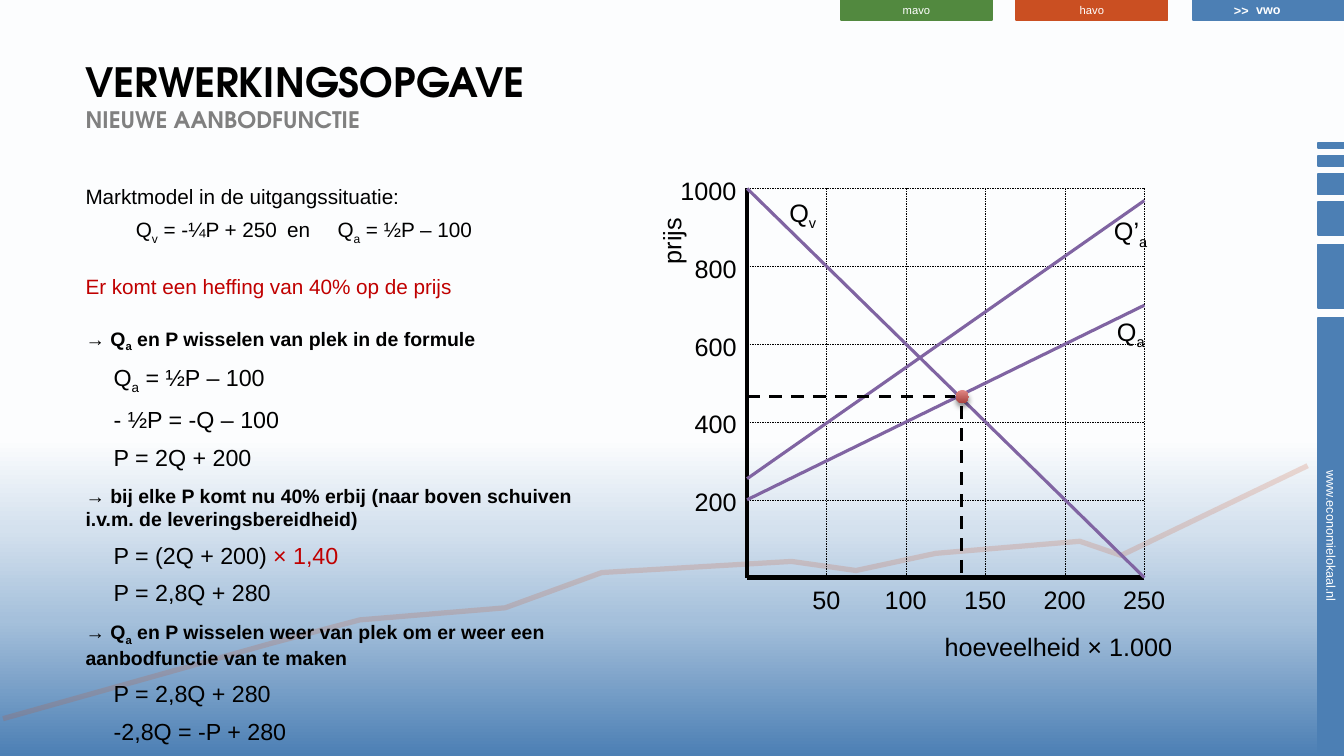
from dataclasses import dataclass

from lxml import etree
from pptx import Presentation
from pptx.dml.color import RGBColor
from pptx.enum.dml import MSO_LINE
from pptx.enum.shapes import MSO_CONNECTOR, MSO_SHAPE
from pptx.enum.text import MSO_ANCHOR, MSO_AUTO_SIZE, PP_ALIGN
from pptx.oxml.ns import qn
from pptx.util import Inches, Pt

RECT, OVAL = MSO_SHAPE.RECTANGLE, MSO_SHAPE.OVAL
STRAIGHT = MSO_CONNECTOR.STRAIGHT
DASH = MSO_LINE.DASH
MIDDLE = MSO_ANCHOR.MIDDLE
LEFT, CENTER = PP_ALIGN.LEFT, PP_ALIGN.CENTER
FIXED = MSO_AUTO_SIZE.NONE

HUES = {
    "blue": "4C7FB4", "orange": "CA4F22", "green": "52893F",
    "violet": "8064A2", "red": "C00000", "ink": "000000",
    "gray": "808080", "white": "FFFFFF",
}
SKY = [(0, "4C7FB4"), (18, "A5C0DB"), (30, "D4E1EE"), (42, "FCFDFE"), (50, "FFFFFF")]
GLOW = [(0, "E18785"), (100, "A7423F")]
X_ZERO, Y_ZERO = 7.41, 5.73
X_SPAN, Y_SPAN = 3.94, 3.86
Q_MAX, P_MAX = 250, 1000


@dataclass
class Bar:
    x: float
    y: float
    wide: float
    high: float
    hue: str = "blue"
    text: str = ""
    size: float = 9
    bold: bool = False
    turn: float = 0


@dataclass
class Stroke:
    start: tuple[float, float]
    end: tuple[float, float]
    hue: str
    width: float
    dashed: bool = False


@dataclass
class Label:
    text: str
    x: float
    y: float
    wide: float
    turn: float = 0
    size: float = 18
    hue: str = "ink"
    bold: bool = False
    high: float = 0.4


@dataclass
class Row:
    text: str
    size: float
    before: float
    hue: str = "ink"
    bold: bool = False
    indent: float = 0
    tail: str = ""
    tabs: tuple[float, ...] = ()


def color(key: str) -> RGBColor:
    return RGBColor.from_string(HUES[key])


def write(para, text: str, *, size: float, hue: str = "ink", bold: bool = False,
          face: str = "Arial", align=LEFT) -> None:
    para.alignment = align
    for spot, part in enumerate(text.split("|")):
        if not part:
            continue
        run = para.add_run()
        run.text = part
        run.font.name, run.font.size, run.font.bold = face, Pt(size), bold
        run.font.color.rgb = color(hue)
        if spot % 2:
            run.font._element.set("baseline", "-25000")


def grade(fill, root, stops: list, angle: float) -> None:
    fill.gradient()
    fill.gradient_angle = angle
    group = root.find(".//" + qn("a:gsLst"))
    for old in list(group):
        group.remove(old)
    for place, code in stops:
        stop = etree.SubElement(group, qn("a:gs"), pos=str(place * 1000))
        etree.SubElement(stop, qn("a:srgbClr"), val=code)


def draw_bar(slide, bar: Bar) -> None:
    shape = slide.shapes.add_shape(RECT, *map(Inches, (bar.x, bar.y, bar.wide, bar.high)))
    shape.rotation = bar.turn
    shape.shadow.inherit = False
    shape.fill.solid()
    shape.fill.fore_color.rgb = shape.line.color.rgb = color(bar.hue)
    shape.line.width = Pt(1.25)
    if bar.text:
        frame = shape.text_frame
        frame.margin_top, frame.margin_bottom = 0, Inches(0.01)
        frame.vertical_anchor = MIDDLE
        write(frame.paragraphs[0], bar.text, size=bar.size, hue="white",
              bold=bar.bold, align=CENTER)


def draw_line(slide, item: Stroke) -> None:
    line = slide.shapes.add_connector(STRAIGHT, *map(Inches, item.start + item.end))
    line.line.color.rgb = color(item.hue)
    line.line.width = Pt(item.width)
    if item.dashed:
        line.line.dash_style = DASH
    etree.SubElement(line._element.spPr, qn("a:effectLst"))


def draw_label(slide, item: Label) -> None:
    box = slide.shapes.add_textbox(*map(Inches, (item.x, item.y, item.wide, item.high)))
    box.rotation = item.turn
    box.text_frame.word_wrap = False
    write(box.text_frame.paragraphs[0], item.text, size=item.size, hue=item.hue, bold=item.bold)


def draw_trend(slide) -> None:
    points = [(12.97, 4.62), (11.12, 5.51), (10.71, 5.37), (9.28, 5.49), (8.49, 5.66),
              (7.85, 5.57), (5.97, 5.68), (5.01, 6.03), (3.57, 6.15), (2.7, 6.38), (0.03, 7.13)]
    marks = [(Inches(x), Inches(y)) for x, y in points]
    build = slide.shapes.build_freeform(*marks[0])
    build.add_line_segments(marks[1:], close=False)
    trend = build.convert_to_shape()
    trend.shadow.inherit = False
    trend.fill.background()
    trend.line.color.rgb = color("orange")
    trend.line.width = Pt(3.75)
    tint = trend._element.find(".//" + qn("a:ln")).find(".//" + qn("a:srgbClr"))
    etree.SubElement(tint, qn("a:alpha"), val="19000")


def draw_ball(slide) -> None:
    ball = slide.shapes.add_shape(OVAL, *map(Inches, (9.48, 3.87, 0.13, 0.13)))
    ball.shadow.inherit = False
    ball.line.fill.background()
    grade(ball.fill, ball._element, GLOW, 270)
    shade = etree.SubElement(ball._element.spPr.find(qn("a:effectLst")), qn("a:outerShdw"),
                             blurRad=str(Pt(4)), dist=str(Pt(3)), dir="5400000", rotWithShape="0")
    tint = etree.SubElement(shade, qn("a:srgbClr"), val=HUES["ink"])
    etree.SubElement(tint, qn("a:alpha"), val="46000")


def draw_title(slide) -> None:
    title = slide.shapes.title
    title.left, title.top, title.width, title.height = map(Inches, (0.75, 0.5, 10.02, 0.89))
    frame = title.text_frame
    frame.auto_size, frame.vertical_anchor = FIXED, MIDDLE
    para = frame.paragraphs[0]
    face = "TeX Gyre Adventor"
    write(para, "VERWERKINGSOPGAVE", size=28.8, bold=True, face=face)
    para.add_line_break()
    write(para, "NIEUWE AANBODFUNCTIE", size=16.2, hue="gray", bold=True, face=face)


def draw_body(slide, rows: list[Row]) -> None:
    frame = slide.shapes.add_textbox(*map(Inches, (0.75, 1.77, 5.4, 5.15))).text_frame
    frame.word_wrap = True
    for spot, row in enumerate(rows):
        para = frame.add_paragraph() if spot else frame.paragraphs[0]
        para.space_before, para.space_after = Pt(row.before), Pt(3.4)
        props = para._p.get_or_add_pPr()
        props.set("marL", str(Inches(row.indent)))
        props.set("indent", "0")
        if row.tabs:
            group = etree.SubElement(props, qn("a:tabLst"))
            for stop in row.tabs:
                etree.SubElement(group, qn("a:tab"), pos=str(Inches(stop)), algn="l")
        write(para, row.text, size=row.size, hue=row.hue, bold=row.bold)
        write(para, row.tail, size=row.size, hue="red")


def step(text: str, tail: str = "") -> Row:
    return Row(text, 16.6, 3.8, indent=0.28, tail=tail)


def head(text: str, before: float = 6) -> Row:
    return Row(text, 13.9, before, bold=True)


def spot(q: float, p: float) -> tuple[float, float]:
    return X_ZERO + X_SPAN * q / Q_MAX, Y_ZERO - Y_SPAN * p / P_MAX


def draw_graph(slide) -> None:
    prices, counts = range(200, P_MAX + 1, 200), range(50, Q_MAX + 1, 50)
    lines = [Stroke(spot(0, P_MAX), spot(0, 0), "ink", 3),
             Stroke(spot(Q_MAX, 0), spot(0, 0), "ink", 3)]
    lines += [Stroke(spot(0, p), spot(Q_MAX, p), "ink", 0.25, True) for p in prices]
    lines += [Stroke(spot(q, P_MAX), spot(q, 0), "ink", 0.25, True) for q in counts]
    lines += [Stroke(spot(0, first), spot(Q_MAX, last), "violet", 2.25)
              for first, last in ((P_MAX, 0), (200, 700), (254, 969))]
    lines += [Stroke(spot(0, 466), spot(131, 466), "ink", 2.25, True),
              Stroke(spot(135, 440), spot(135, 0), "ink", 2.25, True)]
    for line in lines:
        draw_line(slide, line)
    labels = [Label("hoeveelheid × 1.000", 9.27, 6.21, 2.48), Label("prijs", 6.33, 2.19, 0.66, 270),
              Label("Q|v", 7.73, 1.91, 0.48), Label("Q|a", 10.98, 3.09, 0.49),
              Label("Q’|a", 10.95, 2.09, 0.55)]
    for p in prices:
        wide = 0.2 + 0.14 * len(str(p))
        labels.append(Label(str(p), X_ZERO - wide, spot(0, p)[1] - 0.18, wide))
    for q in counts:
        wide = 0.2 + 0.14 * len(str(q))
        labels.append(Label(str(q), spot(q, 0)[0] - wide / 2, 5.75, wide))
    for label in labels:
        draw_label(slide, label)
    draw_ball(slide)


def main() -> None:
    deck = Presentation()
    deck.slide_width, deck.slide_height = Inches(13.33), Inches(7.5)
    slide = deck.slides.add_slide(deck.slide_layouts[5])
    grade(slide.background.fill, slide._element, SKY, 90)
    bars = [Bar(11.83, 0, 1.5, 0.2, "blue", "vwo", 9, True),
            Bar(10.08, 0, 1.5, 0.2, "orange", "havo", 8),
            Bar(8.34, 0, 1.5, 0.2, "green", "mavo", 8)]
    sides = [(4.33, 5.32, "www.economielokaal.nl"), (0.63, 2.74, ""), (0.33, 2.17, ""),
             (0.2, 1.83, ""), (0.1, 1.6, ""), (0.05, 1.44, "")]
    bars += [Bar(13.2 - long / 2, mid - 0.13, long, 0.26, text=text, turn=90)
             for long, mid, text in sides]
    for bar in bars:
        draw_bar(slide, bar)
    draw_trend(slide)
    draw_label(slide, Label(">>", 12.14, -0.02, 0.35, size=9, hue="white", bold=True, high=0.25))
    draw_title(slide)
    draw_body(slide, [
        Row("Marktmodel in de uitgangssituatie:", 14.8, 0),
        Row("\tQ|v| = -¼P + 250\ten\tQ|a| = ½P – 100", 14.8, 3, tabs=(0.44, 2.23, 2.86)),
        Row("Er komt een heffing van 40% op de prijs", 14.8, 17, "red"),
        head("→ Q|a| en P wisselen van plek in de formule", 16.4),
        step("Q|a| = ½P – 100"), step("- ½P = -Q – 100"), step("P = 2Q + 200"),
        head("→ bij elke P komt nu 40% erbij (naar boven schuiven i.v.m. de leveringsbereidheid)"),
        step("P = (2Q + 200) ", "× 1,40"), step("P = 2,8Q + 280"),
        head("→ Q|a| en P wisselen weer van plek om er weer een aanbodfunctie van te maken"),
        step("P = 2,8Q + 280"), step("-2,8Q = -P + 280"),
    ])
    draw_graph(slide)
    deck.save("out.pptx")


if __name__ == "__main__":
    main()
